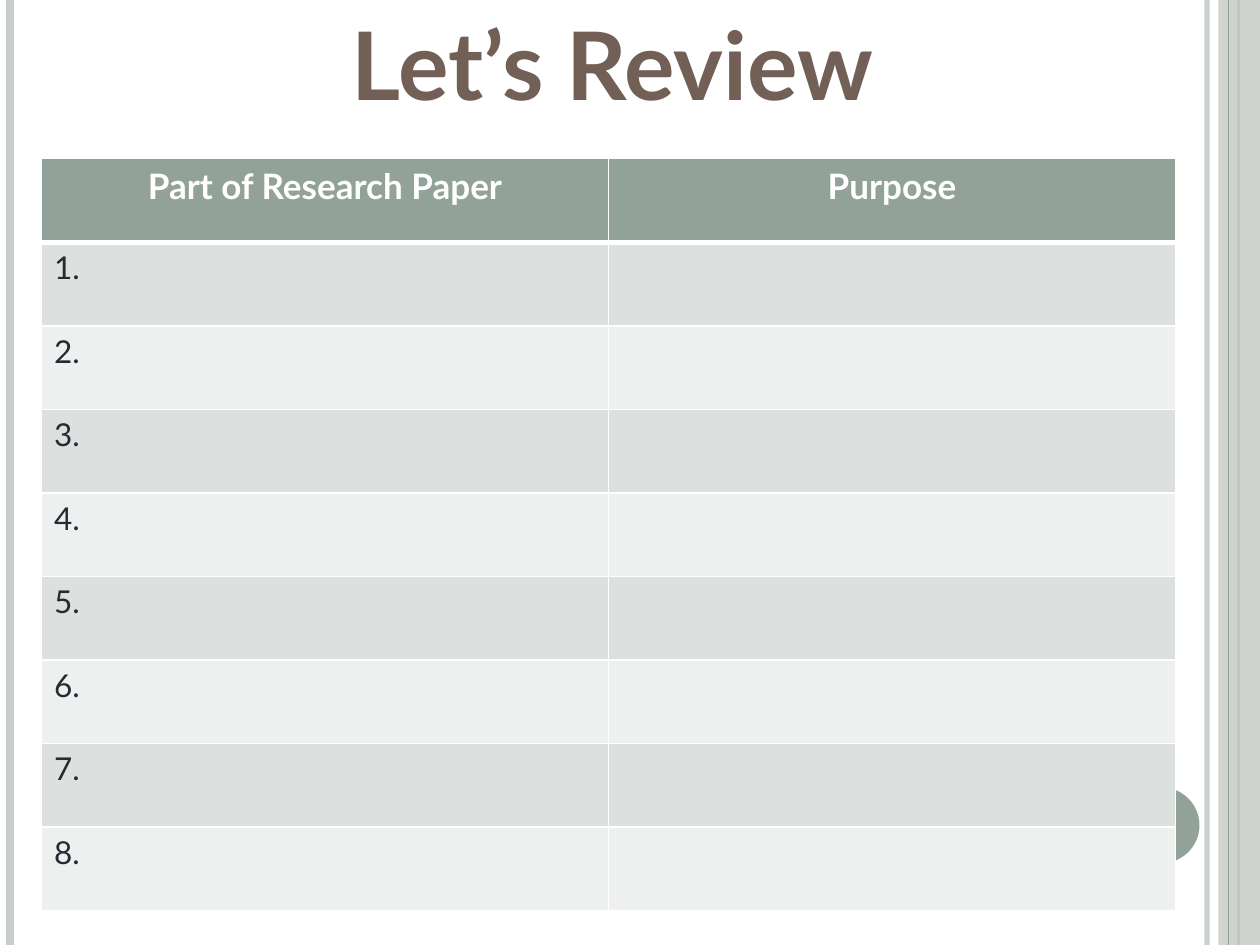
import pptx
import pptx.dml.color
import pptx.enum.shapes
import pptx.enum.text
import pptx.oxml
import pptx.oxml.ns
import pptx.util
from dataclasses import dataclass

Inches = pptx.util.Inches
Pt = pptx.util.Pt
Align = pptx.enum.text.PP_ALIGN
Shape = pptx.enum.shapes.MSO_SHAPE
qn = pptx.oxml.ns.qn


@dataclass(frozen=True)
class Theme:
    font: str = "Lato"
    white: str = "FFFFFF"
    sage: str = "93A299"
    pale: str = "C8CECA"
    brown: str = "726056"
    ink: str = "292934"
    bands: tuple = ("DCE0DE", "EEF0EF")
    title: int = 54
    head: int = 20
    body: int = 18


THEME = Theme()


def rgb(color):
    return pptx.dml.color.RGBColor.from_string(color)


def fade(props, alpha):
    """Set the opacity, in percent, of the first solid colour in props."""
    color = next(props.iter(qn("a:srgbClr")))
    pptx.oxml.ns  # namespace helpers stay with pptx
    node = color.makeelement(qn("a:alpha"), {"val": str(alpha * 1000)})
    color.append(node)


def add_rule(slide, x, color, width, alpha=100):
    """Draw a vertical line over the full slide height."""
    line = slide.shapes.add_connector(
        pptx.enum.shapes.MSO_CONNECTOR.STRAIGHT,
        Inches(x), Inches(0), Inches(x), Inches(7.5))
    line.line.color.rgb = rgb(color)
    line.line.width = Pt(width)
    props = line._element.spPr
    props.append(props.makeelement(qn("a:effectLst"), {}))
    if alpha < 100:
        fade(props, alpha)


def add_block(slide, kind, box, color, alpha=100):
    block = slide.shapes.add_shape(kind, *map(Inches, box))
    block.shadow.inherit = False
    block.fill.solid()
    block.fill.fore_color.rgb = rgb(color)
    block.line.fill.background()
    if alpha < 100:
        fade(block._element.spPr, alpha)


def add_run(para, text, size, color, bold=False):
    run = para.add_run()
    run.text = text
    run.font.name = THEME.font
    run.font.size = Pt(size)
    run.font.bold = bold
    run.font.color.rgb = rgb(color)


def add_title(slide, text):
    box = slide.shapes.add_textbox(
        Inches(2.5), Inches(0), Inches(4.72), Inches(1.01))
    frame = box.text_frame
    frame.word_wrap = False
    frame.auto_size = pptx.enum.text.MSO_AUTO_SIZE.SHAPE_TO_FIT_TEXT
    para = frame.paragraphs[0]
    para.alignment = Align.CENTER
    add_run(para, text, THEME.title, THEME.brown, True)


def style_cell(cell, fill, top=1, bottom=1):
    cell.fill.solid()
    cell.fill.fore_color.rgb = rgb(fill)
    props = cell._tc.get_or_add_tcPr()
    sides = (("L", 1), ("R", 1), ("T", top), ("B", bottom))
    for i, (side, width) in enumerate(sides):
        line = props.makeelement(qn("a:ln" + side), {"w": str(Pt(width))})
        solid = line.makeelement(qn("a:solidFill"), {})
        solid.append(solid.makeelement(qn("a:srgbClr"), {"val": THEME.white}))
        line.append(solid)
        props.insert(i, line)


def add_grid(slide, heads, count):
    """Add a table with a header row and numbered, banded rows."""
    rows = count + 1
    table = slide.shapes.add_table(
        rows, len(heads), Inches(0.33), Inches(1.26),
        Inches(9), Inches(5.97)).table
    for row in table.rows:
        row.height = Inches(5.97 / rows)
    for col, head in enumerate(heads):
        cell = table.cell(0, col)
        style_cell(cell, THEME.sage, bottom=3)
        para = cell.text_frame.paragraphs[0]
        para.alignment = Align.CENTER
        add_run(para, head, THEME.head, THEME.white, True)
    for row in range(1, rows):
        for col in range(len(heads)):
            style_cell(table.cell(row, col), THEME.bands[(row - 1) % 2],
                       top=3 if row == 1 else 1)
        para = table.cell(row, 0).text_frame.paragraphs[0]
        add_run(para, f"{row}.", THEME.body, THEME.ink)


def add_frame(slide):
    """Draw the side rules, the right band and the disc."""
    add_rule(slide, 9.58, THEME.pale, 3, 93)
    add_rule(slide, 0.08, THEME.pale, 4.5)
    add_rule(slide, 9.83, THEME.sage, 1.5)
    add_block(slide, Shape.RECTANGLE, (9.67, 0, 0.33, 7.5), THEME.pale, 87)
    add_rule(slide, 9.75, THEME.sage, 0.75)
    add_block(slide, Shape.OVAL, (8.92, 6.25, 0.6, 0.6), THEME.sage)


def main():
    deck = pptx.Presentation()
    deck.slide_width = Inches(10)
    deck.slide_height = Inches(7.5)
    slide = deck.slides.add_slide(deck.slide_layouts[6])
    add_frame(slide)
    add_title(slide, "Let’s Review")
    add_grid(slide, ("Part of Research Paper", "Purpose"), 8)
    deck.save("out.pptx")


if __name__ == "__main__":
    main()
